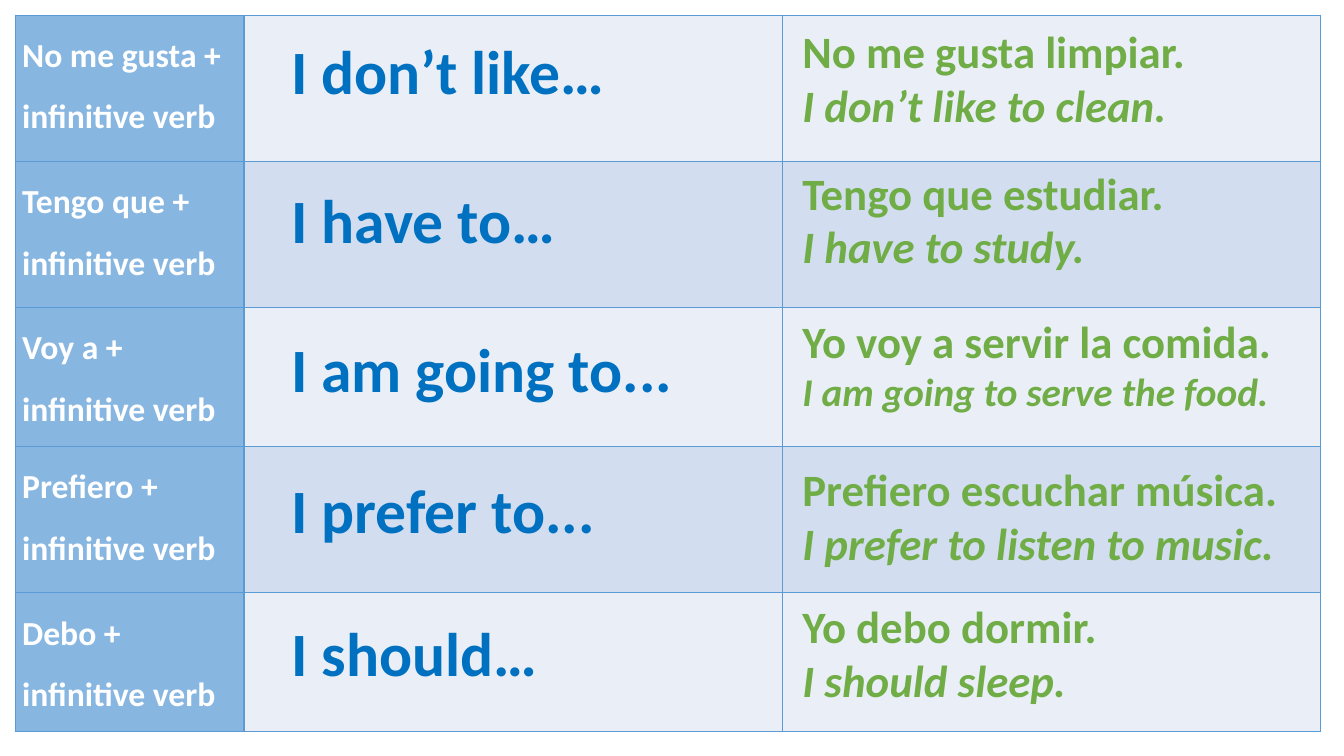
from lxml import etree
from pptx import Presentation
from pptx.dml.color import RGBColor
from pptx.enum import text
from pptx.oxml import ns
from pptx.util import Inches, Pt

COLOURS = {
    "verb": "87B6E1",
    "light": "EAEFF7",
    "dark": "D2DEEF",
    "border": "5B9BD5",
    "white": "FFFFFF",
    "meaning": "0070C0",
    "example": "70AD47",
}
FONT = "Calibri"
COLUMN_WIDTHS = (2.27, 5.34, 5.34)
ROW_HEIGHTS = (1.45, 1.45, 1.38, 1.45, 1.38)
PHRASES = [
    ("No me gusta", "I don’t like…", 0.28,
     "No me gusta limpiar.", "I don’t like to clean.", 0.19, 4.6, 32),
    ("Tengo que", "I have to…", 1.76,
     "Tengo que estudiar.", "I have to study.", 1.59, 4.6, 32),
    ("Voy a", "I am going to...", 3.23,
     "Yo voy a servir la comida.", "I am going to serve the food.", 3.06, 5.16, 28),
    ("Prefiero", "I prefer to...", 4.63,
     "Prefiero escuchar música.", "I prefer to listen to music.", 4.53, 5.16, 32),
    ("Debo", "I should…", 6.05,
     "Yo debo dormir.", "I should sleep.", 5.89, 5.16, 32),
]


def style_paragraph(para, size, colour, italic=False):
    for span in para.runs:
        span.font.name = FONT
        span.font.size = Pt(size)
        span.font.bold = True
        span.font.italic = italic
        span.font.color.rgb = RGBColor.from_string(COLOURS[colour])


def style_cell(cell, colour):
    properties = cell._tc.get_or_add_tcPr()
    for side in ("a:lnL", "a:lnR", "a:lnT", "a:lnB"):
        line = etree.SubElement(properties, ns.qn(side), w=str(Pt(1)))
        fill = etree.SubElement(line, ns.qn("a:solidFill"))
        etree.SubElement(fill, ns.qn("a:srgbClr"), val=COLOURS["border"])
    cell.fill.solid()
    cell.fill.fore_color.rgb = RGBColor.from_string(COLOURS[colour])


def write_verb(cell, verb):
    cell.margin_left = cell.margin_right = Inches(0.07)
    cell.margin_top = cell.margin_bottom = 0
    cell.text_frame.text = f"{verb} + infinitive verb"
    para = cell.text_frame.paragraphs[0]
    para.line_spacing = 1.5
    style_paragraph(para, 24, "white")


def add_phrase_table(page):
    frame = page.shapes.add_table(
        len(ROW_HEIGHTS), len(COLUMN_WIDTHS), Inches(0.15), Inches(0.15),
        Inches(sum(COLUMN_WIDTHS)), Inches(sum(ROW_HEIGHTS)))
    table = frame.table
    for column, width in zip(table.columns, COLUMN_WIDTHS):
        column.width = Inches(width)
    for index, (row, height) in enumerate(zip(table.rows, ROW_HEIGHTS)):
        row.height = Inches(height)
        band = "dark" if index % 2 else "light"
        for cell, colour in zip(row.cells, ("verb", band, band)):
            style_cell(cell, colour)
        write_verb(row.cells[0], PHRASES[index][0])


def add_text(page, left, top, width, height, lines, colour):
    box = page.shapes.add_textbox(
        Inches(left), Inches(top), Inches(width), Inches(height))
    frame = box.text_frame
    frame.word_wrap = True
    frame.auto_size = text.MSO_AUTO_SIZE.SHAPE_TO_FIT_TEXT
    frame.text = "\n".join(line for line, _, _ in lines)
    for para, (_, size, italic) in zip(frame.paragraphs, lines):
        style_paragraph(para, size, colour, italic)


def main():
    deck = Presentation()
    deck.slide_width = Inches(13.33)
    deck.slide_height = Inches(7.5)
    page = deck.slides.add_slide(deck.slide_layouts[6])
    add_phrase_table(page)
    for _, meaning, meaning_top, spanish, english, top, width, size in PHRASES:
        add_text(page, 2.79, meaning_top, 4.6, 0.84,
                 [(meaning, 44, False)], "meaning")
        add_text(page, 7.86, top, width, 1.11 if size == 28 else 1.18,
                 [(spanish, 32, False), (english, size, True)], "example")
    deck.save("out.pptx")


if __name__ == "__main__":
    main()
